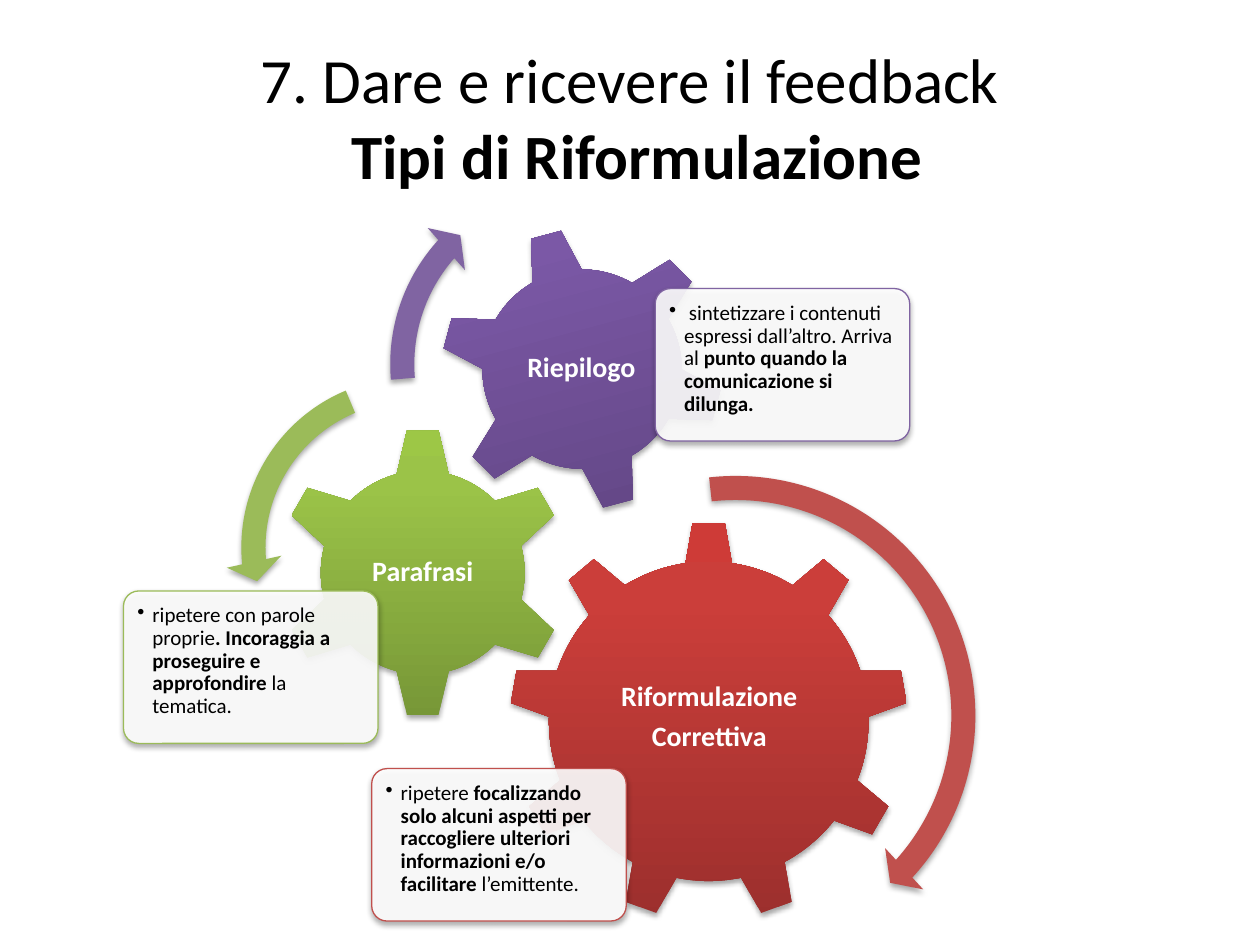
from pptx import Presentation
from pptx.dml.color import RGBColor
from pptx.enum.shapes import MSO_SHAPE as Shape
from pptx.enum.text import MSO_ANCHOR as Anchor, PP_ALIGN as Align
from pptx.oxml.ns import qn
from pptx.util import Pt
from copy import deepcopy
from lxml.etree import SubElement

PX = 9144  # EMU per px, 100 px to the inch
CARD_WIDTH, CARD_HEIGHT = 202, 121
CARD_INSET = 4
COLORS = {
    "text": "000000", "white": "FFFFFF",
    "red": "C0504D", "green": "9BBB59", "purple": "8064A2",
}
GEAR_GRADIENTS = {
    "red": ("9C2F2D", "CB3E3A", "CE3B37"),
    "green": ("779737", "9BC348", "9DC746"),
    "purple": ("5F4480", "7B58A6", "7C57A8"),
}
GRADIENT_STOPS = (0, 0.8, 1)

# color, gear, gear box, rotation, label box, label lines, card corner, card runs (text, bold)
TYPES = [
    ("red", Shape.GEAR_9, (404, 414, 317, 317), 0,
     (468, 488, 190, 163), ["Riformulazione", "Correttiva"], (295, 610),
     [("ripetere ", False),
      ("focalizzando solo alcuni aspetti per raccogliere ulteriori "
       "informazioni e/o facilitare ", True),
      ("l’emittente.", False)]),
    ("green", Shape.GEAR_6, (220, 339, 231, 231), 0,
     (278, 397, 115, 114), ["Parafrasi"], (98, 469),
     [("ripetere con parole proprie", False),
      (". Incoraggia a proseguire e approfondire ", True),
      ("la tematica.", False)]),
    ("purple", Shape.GEAR_6, (349, 180, 226, 226), 345,
     (398, 229, 127, 127), ["Riepilogo"], (520, 229),
     [(" sintetizzare i contenuti espressi dall’altro. Arriva al ", False),
      ("punto quando la comunicazione si dilunga.", True)]),
]
ARROWS = [
    ("red", Shape.CIRCULAR_ARROW, (381, 365, 406, 406),
     (0.047, 2.99, 25.37, 158.17, 0.055)),
    ("green", Shape.LEFT_CIRCULAR_ARROW, (179, 287, 295, 295),
     (0.065, 4.3, 104.891, 148.378, 0.075)),
    ("purple", Shape.CIRCULAR_ARROW, (297, 130, 318, 318),
     (0.06, 3.941, 133.138, 105.082, 0.07)),
]


def px(*lengths):
    return [length * PX for length in lengths]


def rgb(name):
    return RGBColor.from_string(COLORS[name])


def write(frame, paragraphs, size, color="text", align=Align.LEFT, anchor=Anchor.TOP,
          inset=None, line_spacing=None, after=None, bullet=False):
    """Fill a text frame with paragraphs, each a list of (text, bold) runs."""
    frame.word_wrap = True
    frame.vertical_anchor = anchor
    if inset is not None:
        frame.margin_left = frame.margin_right = inset * PX
        frame.margin_top = frame.margin_bottom = inset * PX
    for index, runs in enumerate(paragraphs):
        paragraph = frame.add_paragraph() if index else frame.paragraphs[0]
        paragraph.alignment = align
        if line_spacing:
            paragraph.line_spacing = line_spacing
        if after:
            paragraph.space_after = Pt(after)
        if bullet:
            add_bullet(paragraph)
        for text, bold in runs:
            if text == "\n":
                paragraph.add_line_break()
                continue
            run = paragraph.add_run()
            run.text = text
            font = run.font
            font.name, font.size, font.bold = "Calibri", Pt(size), bold
            font.color.rgb = rgb(color)


def add_bullet(paragraph):
    paragraph.level = 1
    properties = paragraph._p.get_or_add_pPr()
    properties.set("marL", str(12 * PX))
    properties.set("indent", str(-12 * PX))
    SubElement(properties, qn("a:buChar"), char="•")


def add_shadowed(slide, kind, box, adjustments=()):
    """Add a preset shape without outline and with the soft shadow below it."""
    shape = slide.shapes.add_shape(kind, *px(*box))
    for index, value in enumerate(adjustments):
        shape.adjustments[index] = value
    shape.line.fill.background()
    shape.shadow.inherit = False
    effects = shape._element.spPr.find(qn("a:effectLst"))
    shadow = SubElement(effects, qn("a:outerShdw"), blurRad="40000", dist="23000",
                        dir="5400000", rotWithShape="0")
    shade = SubElement(shadow, qn("a:srgbClr"), val=COLORS["text"])
    SubElement(shade, qn("a:alpha"), val="35000")
    return shape


def add_gear(slide, kind, box, rotation, color):
    gear = add_shadowed(slide, kind, box)
    gear.rotation = rotation
    fill = gear.fill
    fill.gradient()
    fill.gradient_angle = 90
    stop_list = gear._element.spPr.find(".//" + qn("a:gsLst"))
    stop_list.append(deepcopy(stop_list[0]))
    for stop, position, shade in zip(fill.gradient_stops, GRADIENT_STOPS,
                                     GEAR_GRADIENTS[color]):
        stop.position = position
        stop.color.rgb = RGBColor.from_string(shade)


def add_label(slide, box, lines):
    label = slide.shapes.add_textbox(*px(*box))
    write(label.text_frame, [[(line, True)] for line in lines], 16, color="white",
          align=Align.CENTER, anchor=Anchor.MIDDLE, inset=2, line_spacing=0.9, after=5.6)


def add_card(slide, corner, color, runs):
    left, top = corner
    card = add_shadowed(slide, Shape.ROUNDED_RECTANGLE,
                        (left, top, CARD_WIDTH, CARD_HEIGHT), (0.1,))
    card.fill.solid()
    card.fill.fore_color.rgb = rgb("white")
    white = card._element.spPr.find(qn("a:solidFill"))[0]
    SubElement(white, qn("a:alpha"), val="90000")
    card.line.color.rgb = rgb(color)
    card.line.width = Pt(0.75)
    description = slide.shapes.add_textbox(*px(
        left + CARD_INSET, top + CARD_INSET,
        CARD_WIDTH - 2 * CARD_INSET, CARD_HEIGHT - 2 * CARD_INSET))
    write(description.text_frame, [runs], 12, inset=7, line_spacing=0.9, after=1.8,
          bullet=True)


def add_arrow(slide, color, kind, box, adjustments):
    arrow = add_shadowed(slide, kind, box, adjustments)
    arrow.fill.solid()
    arrow.fill.fore_color.rgb = rgb(color)


def add_title(slide):
    title = slide.shapes.title
    title.left, title.top, title.width, title.height = px(50, 30, 900, 125)
    write(title.text_frame,
          [[("7. Dare e ricevere il feedback", False), ("\n", False),
            (" Tipi di Riformulazione", True)]],
          36, align=Align.CENTER, anchor=Anchor.MIDDLE)


def main():
    deck = Presentation()
    deck.slide_width, deck.slide_height = px(1000, 750)
    slide = deck.slides.add_slide(deck.slide_layouts[5])
    add_title(slide)
    for color, kind, box, rotation, label_box, lines, corner, runs in TYPES:
        add_gear(slide, kind, box, rotation, color)
        add_label(slide, label_box, lines)
        add_card(slide, corner, color, runs)
    for arrow in ARROWS:
        add_arrow(slide, *arrow)
    deck.save("out.pptx")


if __name__ == "__main__":
    main()
